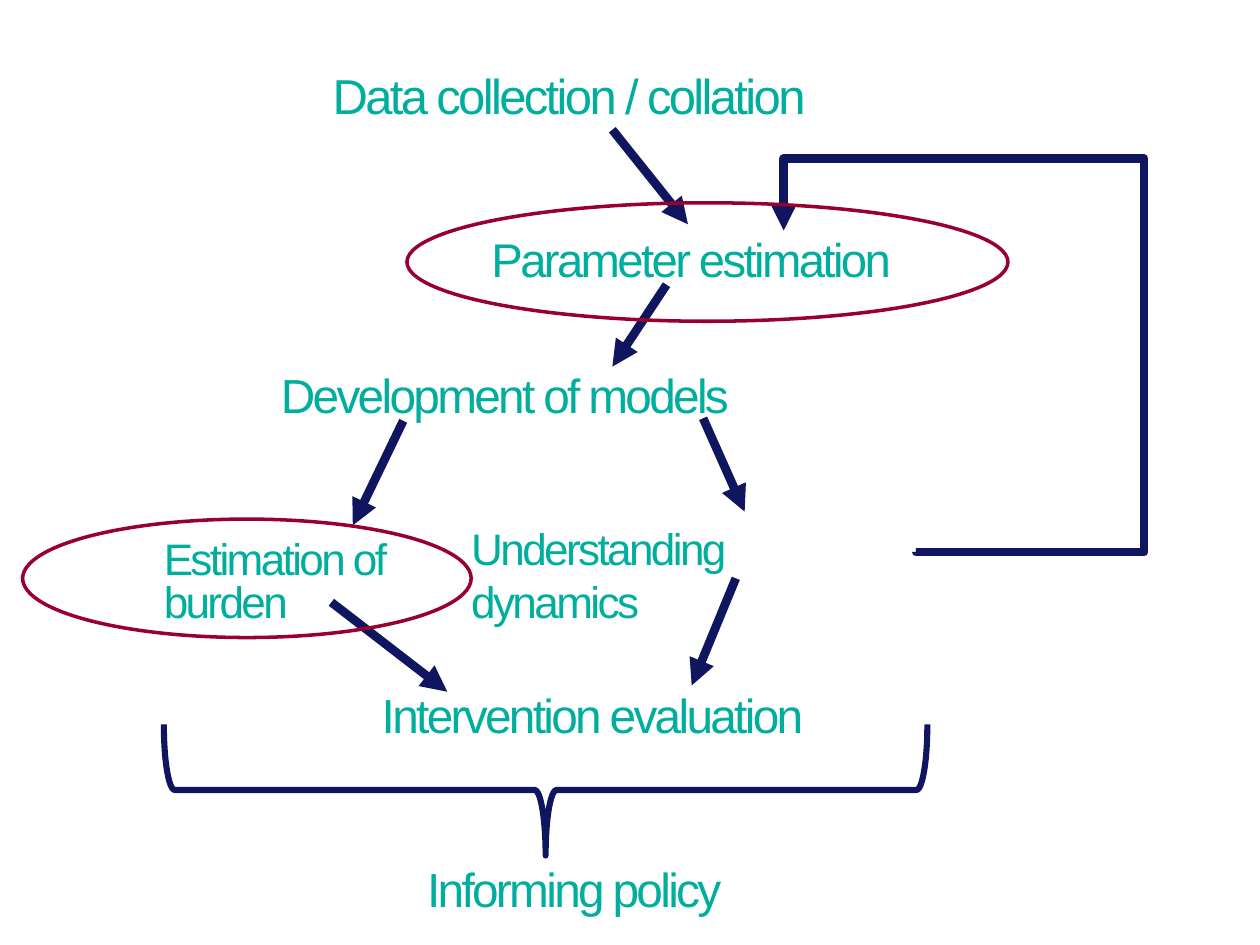
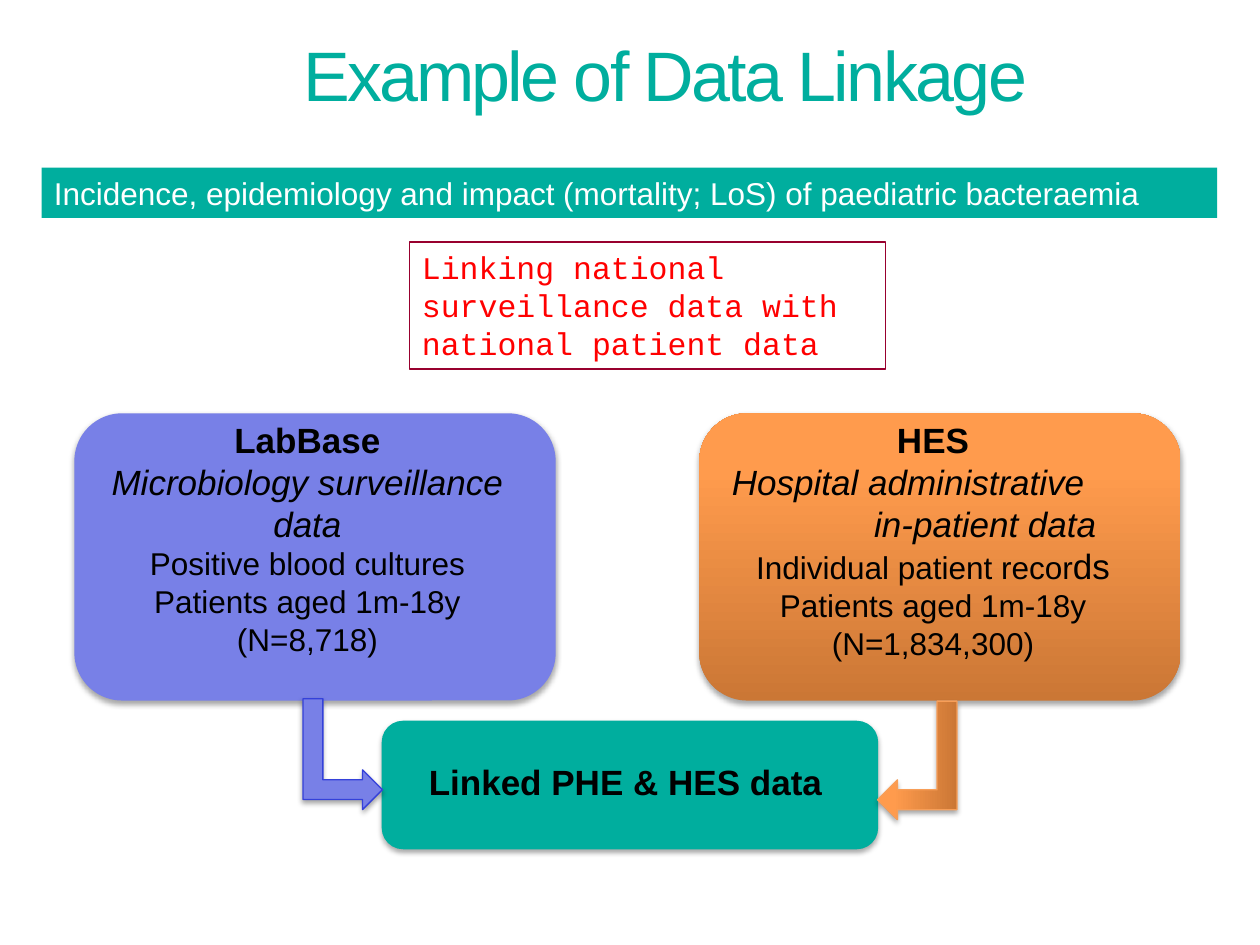
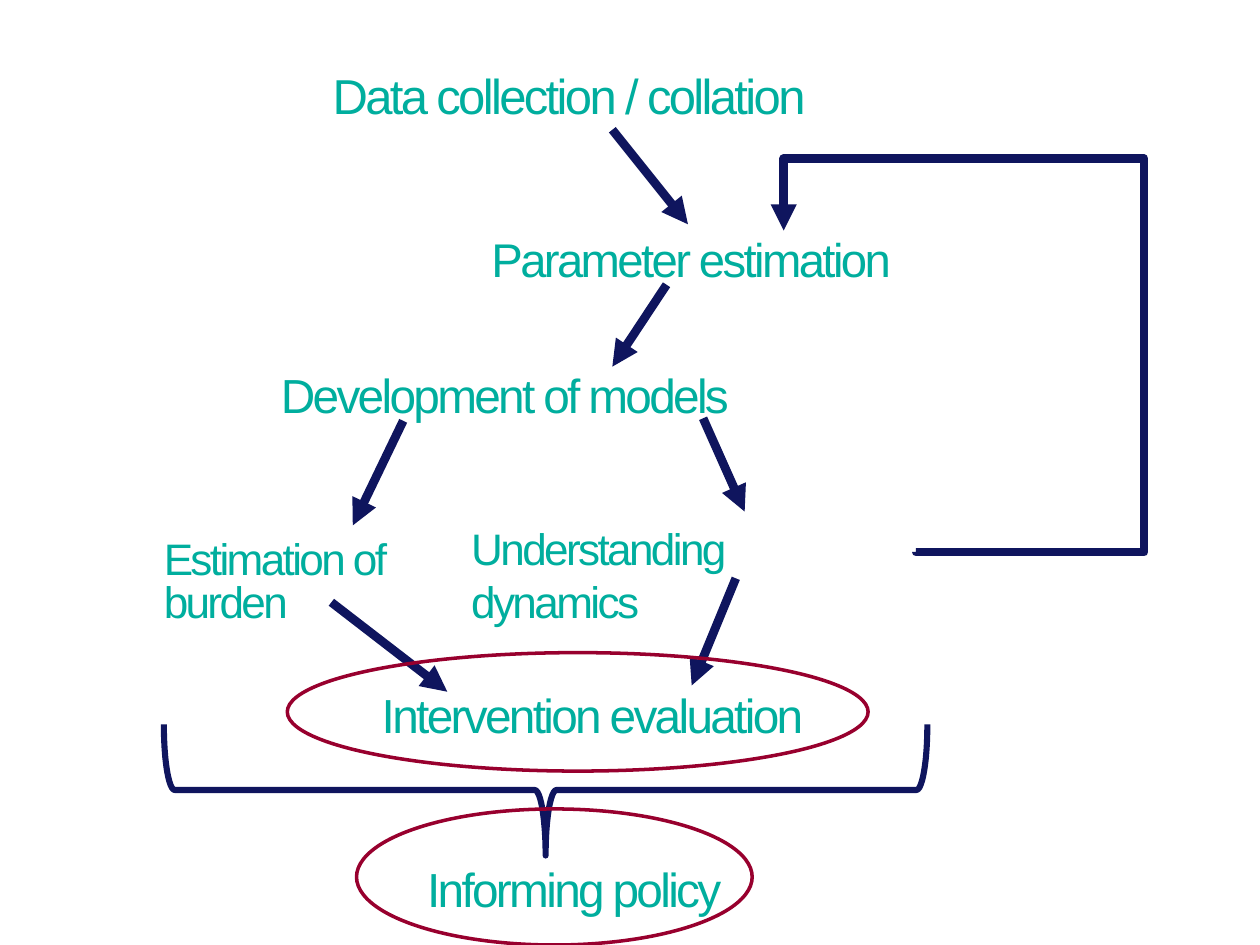
"""Build three slides on infection modelling steps and data linkage."""
from copy import deepcopy

from lxml import etree
from pptx import Presentation
from pptx.dml.color import RGBColor
from pptx.enum import shapes, text
from pptx.oxml import ns
from pptx.util import Inches, Pt

TEAL = RGBColor(0x00, 0xAE, 0x9E)
NAVY = RGBColor(0x0F, 0x15, 0x5E)
CRIMSON = RGBColor(0x98, 0x00, 0x2E)
RED = RGBColor(0xFF, 0x00, 0x00)
BLACK = RGBColor(0x00, 0x00, 0x00)
WHITE = RGBColor(0xFF, 0xFF, 0xFF)
VIOLET = RGBColor(0x78, 0x80, 0xE7)
VIOLET_EDGE = RGBColor(0x34, 0x41, 0xDA)
ORANGE_EDGE = RGBColor(0xF7, 0x9E, 0x58)
ORANGE_STOPS = [
    (0, RGBColor(0xCB, 0x77, 0x35)),
    (0.8, RGBColor(0xFF, 0x9B, 0x4D)),
    (1, RGBColor(0xFF, 0x9C, 0x4F)),
]

SHAPE = shapes.MSO_SHAPE
LEFT, CENTER = text.PP_ALIGN.LEFT, text.PP_ALIGN.CENTER
TITLE_ONLY = 5

STEPS = [
    ("Development of models", 27.3, (2.23, 2.9, 4.07, 0.71), None),
    ("Estimation of burden", 25.2, (1.3, 4.3, 2.6, 0.71), 0.8),
    ("Data collection / collation", 28, (2.64, 0.52, 5.2, 1.02), None),
    ("Understanding dynamics", 25.2, (3.74, 4.14, 3.37, 0.71), None),
    ("Intervention evaluation", 27.3, (3.03, 5.44, 4.07, 0.71), None),
    ("Informing policy", 27.3, (3.39, 6.82, 4.07, 0.71), None),
]
STEP_ARROWS = [
    (4.86, 1.03, 5.46, 1.78),
    (2.63, 4.78, 3.55, 5.49),
    (5.29, 2.26, 4.86, 2.91),
    (5.58, 3.32, 5.91, 4.06),
    (3.2, 3.34, 2.8, 4.17),
    (5.84, 4.59, 5.49, 5.44),
]


def inches(values):
    """Turn a row of numbers into lengths."""
    return [Inches(value) for value in values]


def style_font(font, size, color, name="Arial", bold=False, italic=False):
    """Set the look of a font."""
    font.size, font.name, font.bold, font.italic = Pt(size), name, bold, italic
    font.color.rgb = color


def prepare_frame(frame, inset=True):
    """Make a text frame wrap and start at its top."""
    frame.word_wrap = True
    frame.auto_size = text.MSO_AUTO_SIZE.NONE
    frame.vertical_anchor = text.MSO_ANCHOR.TOP
    if not inset:
        frame.margin_left = frame.margin_top = 0
        frame.margin_right = frame.margin_bottom = 0


def write_heading(shape, wording, size, align=LEFT, line_spacing=None):
    """Write tightly spaced teal wording without insets."""
    prepare_frame(shape.text_frame, inset=False)
    paragraph = shape.text_frame.paragraphs[0]
    paragraph.text = wording
    paragraph.alignment = align
    if line_spacing:
        paragraph.line_spacing = line_spacing
    style_font(paragraph.font, size, TEAL)
    paragraph.font._element.set("spc", "-150")


def add_titled_slide(presentation, wording, size, box, align=LEFT):
    """Add a slide and place its title."""
    slide = presentation.slides.add_slide(presentation.slide_layouts[TITLE_ONLY])
    title = slide.shapes.title
    title.left, title.top, title.width, title.height = inches(box)
    write_heading(title, wording, size, align)
    return slide


def write_line(frame, wording, size=18, color=BLACK, align=CENTER, indent=0, **look):
    """Append one paragraph to a text frame."""
    first = frame.paragraphs[0]
    paragraph = frame.add_paragraph() if first.runs else first
    paragraph.add_run().text = wording
    paragraph.alignment = align
    if indent:
        paragraph._p.get_or_add_pPr().set("marL", str(Inches(indent)))
    style_font(paragraph.font, size, color, **look)
    return paragraph


def add_text_box(slide, box):
    """Add a wrapping text box and return its frame."""
    frame = slide.shapes.add_textbox(*inches(box)).text_frame
    prepare_frame(frame)
    return frame


def fill_gradient(fill):
    """Fill from dark orange at the bottom to light at the top."""
    fill.gradient()
    fill.gradient_angle = 90
    last = fill.gradient_stops[1]._gs
    last.addnext(deepcopy(last))
    for stop, (position, color) in zip(fill.gradient_stops, ORANGE_STOPS):
        stop.position = position
        stop.color.rgb = color


def add_shadow(shape):
    """Add a soft shadow below a shape."""
    effects = shape._element.spPr.find(ns.qn("a:effectLst"))
    shadow = etree.SubElement(
        effects, ns.qn("a:outerShdw"), blurRad=str(Pt(3.1)), dist=str(Pt(1.8)),
        dir="5400000", rotWithShape="0")
    color = etree.SubElement(shadow, ns.qn("a:srgbClr"), val="000000")
    etree.SubElement(color, ns.qn("a:alpha"), val="35000")


def add_shape(slide, kind, box, fill=None, line=None, width=0.75, rotation=0, shadow=False):
    """Add a preset shape; a list as fill means the orange gradient."""
    shape = slide.shapes.add_shape(kind, *inches(box))
    shape.shadow.inherit = False
    shape.rotation = rotation
    if fill is None:
        shape.fill.background()
    elif fill is ORANGE_STOPS:
        fill_gradient(shape.fill)
    else:
        shape.fill.solid()
        shape.fill.fore_color.rgb = fill
    if line is None:
        shape.line.fill.background()
    else:
        shape.line.color.rgb = line
        shape.line.width = Pt(width)
    if shadow:
        add_shadow(shape)
    return shape


def add_arrow(slide, ends, kind=shapes.MSO_CONNECTOR.STRAIGHT):
    """Add a thick navy arrow."""
    arrow = slide.shapes.add_connector(kind, *inches(ends))
    arrow.line.color.rgb = NAVY
    arrow.line.width = Pt(5)
    properties = arrow._element.spPr
    etree.SubElement(properties.find(ns.qn("a:ln")), ns.qn("a:tailEnd"), type="triangle")
    etree.SubElement(properties, ns.qn("a:effectLst"))
    return arrow


def add_feedback_arrow(slide):
    """Lead from dynamics round the right side back to estimation."""
    arrow = add_arrow(slide, (5.47, 3.63, 8.02, 2.58), shapes.MSO_CONNECTOR.ELBOW)
    properties = arrow._element.spPr
    properties.find(ns.qn("a:xfrm")).set("rot", "16200000")
    geometry = properties.find(ns.qn("a:prstGeom"))
    geometry.set("prst", "bentConnector5")
    guides = geometry.get_or_add_avLst()
    for number, value in enumerate((-100, -172400, 122400), start=1):
        etree.SubElement(guides, ns.qn("a:gd"), name=f"adj{number}", fmla=f"val {value}")


def build_process_slide(presentation, highlights):
    """Draw the modelling process and ring the highlighted steps."""
    slide = add_titled_slide(presentation, "Parameter estimation", 27, (3.9, 1.83, 4.65, 0.55))
    for wording, size, box, line_spacing in STEPS:
        step = slide.shapes.add_textbox(*inches(box))
        write_heading(step, wording, size, line_spacing=line_spacing)
    add_feedback_arrow(slide)
    for ends in STEP_ARROWS:
        add_arrow(slide, ends)
    add_shape(slide, SHAPE.RIGHT_BRACE, (3.81, 3.24, 1.04, 6.06), line=NAVY, width=3.5, rotation=90)
    for box in highlights:
        add_shape(slide, SHAPE.OVAL, box, line=CRIMSON, width=2)


def write_cohort(frame, count):
    """Write the closing lines of a data source."""
    write_line(frame, "Patients aged 1m-18y")
    write_line(frame, f"(N={count})")


def build_linkage_slide(presentation):
    """Draw two data sources that feed one linked data set."""
    slide = add_titled_slide(
        presentation, "Example of Data Linkage", 40, (1.56, 0.25, 7.44, 0.71), CENTER)
    panels = [
        ((3.03, 5.72, 3.94, 1.02), TEAL),
        ((5.55, 3.28, 3.82, 2.28), ORANGE_STOPS),
        ((0.59, 3.28, 3.82, 2.28), VIOLET),
    ]
    for box, fill in panels:
        add_shape(slide, SHAPE.ROUNDED_RECTANGLE, box, fill, shadow=True)

    laboratory = add_text_box(slide, (0.59, 3.27, 3.7, 2.32))
    write_line(laboratory, "LabBase", 20, bold=True)
    write_line(laboratory, "Microbiology surveillance data", 20, italic=True)
    write_line(laboratory, "Positive blood cultures")
    write_cohort(laboratory, "8,718")

    hospital = add_text_box(slide, (5.71, 3.27, 3.39, 2.42))
    write_line(hospital, "HES", 20, bold=True)
    write_line(hospital, "Hospital administrative", 20, align=LEFT, italic=True)
    write_line(hospital, "in-patient data", 20, align=LEFT, indent=1.13, italic=True)
    records = write_line(hospital, "Individual patient recor")
    ending = records.add_run()
    ending.text = "ds"
    ending.font.size = Pt(20)
    write_cohort(hospital, "1,834,300")

    linked = add_text_box(slide, (3.27, 5.99, 3.39, 0.44))
    write_line(linked, "Linked PHE & HES data", 20, bold=True)

    add_shape(slide, SHAPE.BENT_UP_ARROW, (2.28, 5.67, 0.88, 0.63), VIOLET, VIOLET_EDGE,
              rotation=90, shadow=True)
    hospital_arrow = add_shape(slide, SHAPE.BENT_UP_ARROW, (6.81, 5.72, 0.94, 0.63),
                               ORANGE_STOPS, ORANGE_EDGE, rotation=90, shadow=True)
    hospital_arrow._element.spPr.find(ns.qn("a:xfrm")).set("flipV", "1")

    aim = add_shape(slide, SHAPE.RECTANGLE, (3.25, 1.92, 3.78, 1.01), line=CRIMSON)
    prepare_frame(aim.text_frame)
    write_line(aim.text_frame, "Linking national surveillance data with national patient data",
               color=RED, align=LEFT, name="Courier New")
    band = add_shape(slide, SHAPE.RECTANGLE, (0.33, 1.33, 9.33, 0.4), TEAL)
    prepare_frame(band.text_frame)
    write_line(band.text_frame,
               "Incidence, epidemiology and impact (mortality; LoS) of paediatric bacteraemia",
               color=WHITE, align=LEFT)


def main():
    """Build and save the presentation."""
    presentation = Presentation()
    presentation.slide_width, presentation.slide_height = Inches(10), Inches(7.5)
    build_process_slide(presentation, [(0.18, 4.12, 3.56, 0.94), (3.23, 1.61, 4.77, 0.94)])
    build_linkage_slide(presentation)
    build_process_slide(presentation, [(2.28, 5.18, 4.61, 0.94), (2.83, 6.42, 3.14, 1.08)])
    presentation.save("out.pptx")


if __name__ == "__main__":
    main()
